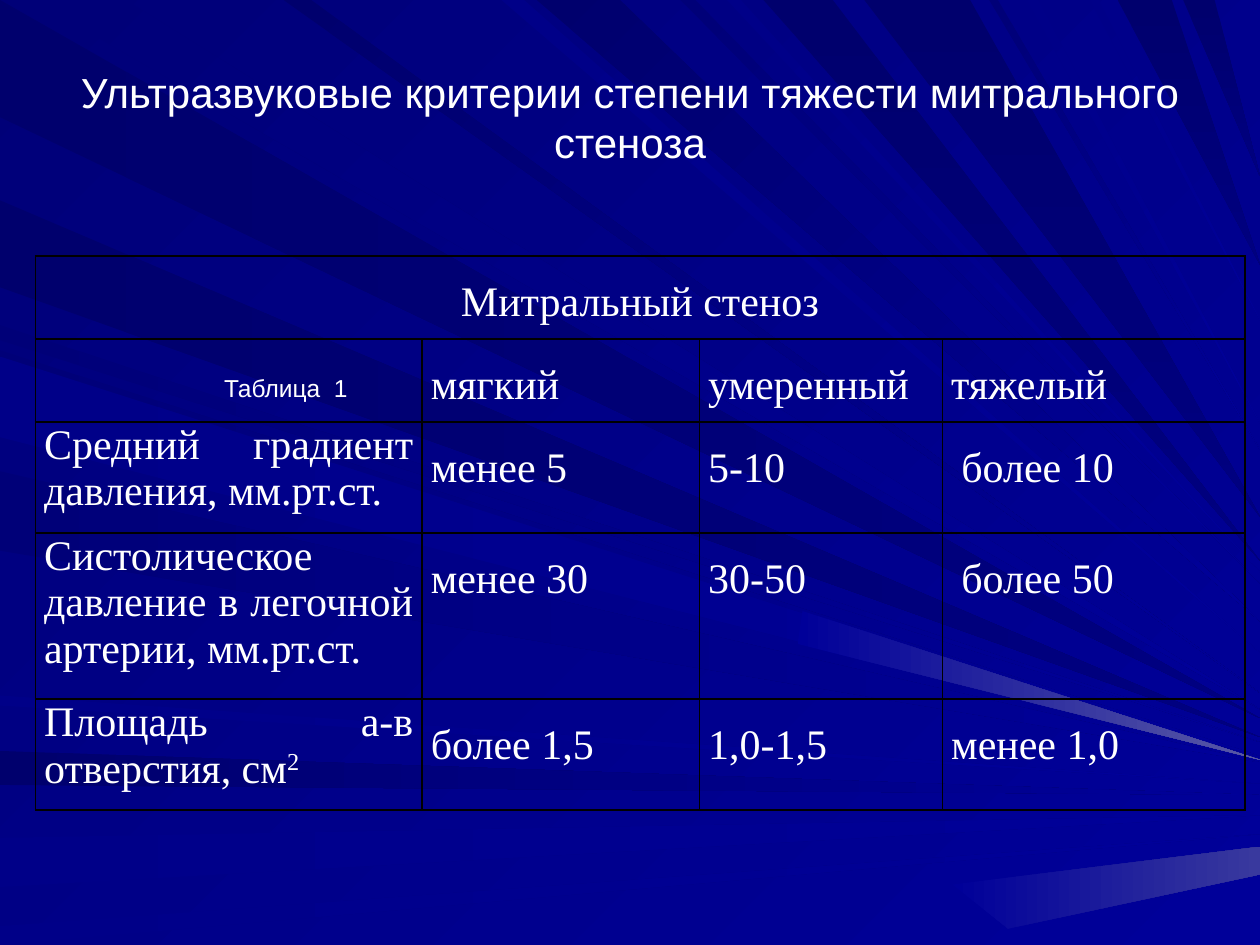
from typing import NamedTuple

from lxml import etree
from pptx import Presentation
from pptx.dml.color import RGBColor
from pptx.enum.text import MSO_ANCHOR, MSO_AUTO_SIZE, PP_ALIGN
from pptx.oxml.ns import qn
from pptx.util import Inches, Pt

LEFT, CENTER, JUSTIFY = PP_ALIGN.LEFT, PP_ALIGN.CENTER, PP_ALIGN.JUSTIFY
MIDDLE, TOP = MSO_ANCHOR.MIDDLE, MSO_ANCHOR.TOP
WHITE = RGBColor.from_string("FFFFFF")
BLACK = RGBColor.from_string("000000")
NAVY = RGBColor.from_string("000078")
BLUE = RGBColor.from_string("000099")
DEEP = RGBColor.from_string("000080")
INK = RGBColor.from_string("00006D")
ROYAL = RGBColor.from_string("000088")
HAZE = RGBColor.from_string("39399E")
GLOW = RGBColor.from_string("5A5AA6")
SANS, SERIF = "Arial", "Times New Roman"
WIDE, HIGH = 10, 7.5

# Tones of the beams: colour at the source and at the tip
DARK, DUSK, MID, LIGHT = (INK, DEEP), (INK, BLUE), (NAVY, BLUE), (ROYAL, BLUE)


class Ray(NamedTuple):
    """A wedge from a stretch of the top or left edge to a tip on the right edge."""
    edge: str
    start: float
    stop: float
    tip: float
    tone: tuple


class Row(NamedTuple):
    """A table row: height, label, superscript of the label, values."""
    height: float
    label: str
    power: str
    values: list


RAYS = [
    Ray("left", 0, .93, 5.7, DARK),
    Ray("top", .26, 1, 5.63, MID),
    Ray("left", 5.96, 6.23, 6.31, DUSK),
    Ray("left", 6.65, 7.04, 6.47, LIGHT),
    Ray("left", 7.35, 7.5, 6.62, LIGHT),
    Ray("left", 2.58, 2.7, 5.89, MID),
    Ray("left", 1.59, 2.28, 5.85, DARK),
    Ray("top", 3.98, 4.16, 5.18, LIGHT),
    Ray("top", 4.26, 4.92, 4.93, DUSK),
    Ray("top", 5.4, 5.52, 4.63, MID),
    Ray("top", 6.06, 6.61, 4.45, DARK),
    Ray("top", 8.87, 9.3, 2.1, DARK),
    Ray("top", 9.39, 9.64, 1.4, DARK),
    Ray("left", 2.78, 3.42, 6, MID),
    Ray("left", 3.74, 4.37, 6.05, MID),
    Ray("left", 5.52, 5.6, 6.22, LIGHT),
    Ray("top", 2.25, 2.47, 5.5, DUSK),
    Ray("top", 5.77, 5.88, 4.54, LIGHT),
    Ray("top", 6.86, 7.7, 4.1, DARK),
    Ray("top", 7.85, 7.92, 3.57, MID),
    Ray("top", 8.15, 8.24, 3.36, LIGHT),
    Ray("top", 8.65, 8.72, 2.54, LIGHT),
    Ray("left", 2.83, 3.47, 6.03, LIGHT),
]

COLS = [3.07, 2.2, 1.93, 2.4]
HEAD = "Митральный стеноз"
ROWS = [
    Row(.66, "", "", ["мягкий", "умеренный", "тяжелый"]),
    Row(.88, "Средний градиент давления, мм.рт.ст.", "", ["менее 5", "5-10", "более 10"]),
    Row(1.32, "Систолическое давление в легочной артерии, мм.рт.ст.", "",
        ["менее 30", "30-50", "более 50"]),
    Row(.88, "Площадь а-в отверстия, см", "2", ["более 1,5", "1,0-1,5", "менее 1,0"]),
]


def blend(fill, tone: tuple, angle: int) -> None:
    """Fill with two colours; the angle runs clockwise."""
    fill.gradient()
    fill.gradient_angle = (360 - angle) % 360
    for stop, color in zip(fill.gradient_stops, tone):
        stop.color.rgb = color


def draw_beam(slide, points: list, tone: tuple, angle: int = 0) -> None:
    first, *rest = [(Inches(x), Inches(y)) for x, y in points]
    pen = slide.shapes.build_freeform(*first)
    pen.add_line_segments(rest, close=True)
    shape = pen.convert_to_shape()
    shape.shadow.inherit = False
    shape.line.fill.background()
    blend(shape.fill, tone, angle)


def draw_ray(slide, ray: Ray) -> None:
    tip = (WIDE, ray.tip)
    if ray.edge == "top":
        angle = 90 if ray.tone == DARK else 45
        draw_beam(slide, [(ray.start, 0), (ray.stop, 0), tip], ray.tone, angle)
    else:
        draw_beam(slide, [(0, ray.start), (0, ray.stop), tip], ray.tone)


def write(frame, text: str, *, size: int = 24, font: str = SERIF, align=JUSTIFY,
          space: float = 1.0, power: str = "") -> None:
    para = frame.paragraphs[0]
    para.alignment = align
    para.line_spacing = space
    for part in filter(None, (text, power)):
        run = para.add_run()
        run.text = part
        run.font.size = Pt(size)
        run.font.name = font
        run.font.color.rgb = WHITE
    if power:
        run.font._element.set("baseline", "30000")


def style_cell(cell) -> None:
    """Clear the fill, set the margins and rule all four sides."""
    cell.margin_left = cell.margin_right = Inches(.07)
    cell.margin_top = cell.margin_bottom = 0
    cell.vertical_anchor = TOP
    props = cell._tc.get_or_add_tcPr()
    for side in ("lnL", "lnR", "lnT", "lnB"):
        line = etree.SubElement(props, qn("a:" + side), w=str(Pt(1)))
        paint = etree.SubElement(line, qn("a:solidFill"))
        etree.SubElement(paint, qn("a:srgbClr"), val=str(BLACK))
    cell.fill.background()


def draw_table(slide) -> None:
    heights = [ROWS[0].height] + [row.height for row in ROWS]
    grid = slide.shapes.add_table(len(heights), len(COLS), Inches(.28), Inches(2.03),
                                  Inches(sum(COLS)), Inches(sum(heights))).table
    grid.first_row = grid.horz_banding = False
    for col, width in zip(grid.columns, COLS):
        col.width = Inches(width)
    for row, height in zip(grid.rows, heights):
        row.height = Inches(height)
    for cell in grid.iter_cells():
        style_cell(cell)

    grid.cell(0, 0).merge(grid.cell(0, len(COLS) - 1))
    write(grid.cell(0, 0).text_frame, HEAD, align=CENTER, space=1.5)
    for i, row in enumerate(ROWS, 1):
        write(grid.cell(i, 0).text_frame, row.label, power=row.power)
        for j, value in enumerate(row.values, 1):
            cell = grid.cell(i, j)
            write(cell.text_frame, value, space=1.5)
            if j == len(row.values) and value.startswith("более"):
                cell.margin_left = Inches(.15)


def main() -> None:
    deck = Presentation()
    deck.slide_width, deck.slide_height = Inches(WIDE), Inches(HIGH)
    slide = deck.slides.add_slide(deck.slide_layouts[5])

    # Background with beams of light and two bright glints
    blend(slide.background.fill, (NAVY, BLUE), 45)
    for ray in RAYS:
        draw_ray(slide, ray)
    draw_beam(slide, [(6.37, 4.85), (6.33, 5.11), (WIDE, 6.03)], (BLUE, GLOW))
    draw_beam(slide, [(7.56, 7.02), (8, 7.37), (WIDE, 6.94), (WIDE, 6.72)], (BLUE, HAZE))

    # Title, lifted above the beams
    title = slide.shapes.title
    slide.shapes._spTree.append(title._element)
    title.left, title.top = Inches(.5), Inches(.3)
    title.width, title.height = Inches(9), Inches(1.25)
    title.text_frame.auto_size = MSO_AUTO_SIZE.NONE
    title.text_frame.vertical_anchor = MIDDLE
    write(title.text_frame, "Ультразвуковые критерии степени тяжести митрального стеноза",
          font=SANS, align=CENTER)

    # Table and its caption
    draw_table(slide)
    note = slide.shapes.add_textbox(Inches(1.68), Inches(2.91), Inches(1.19), Inches(.34))
    note.text_frame.word_wrap = False
    note.text_frame.vertical_anchor = MIDDLE
    write(note.text_frame, "Таблица  1", size=14, font=SANS, align=LEFT)

    deck.save("out.pptx")


if __name__ == "__main__":
    main()
